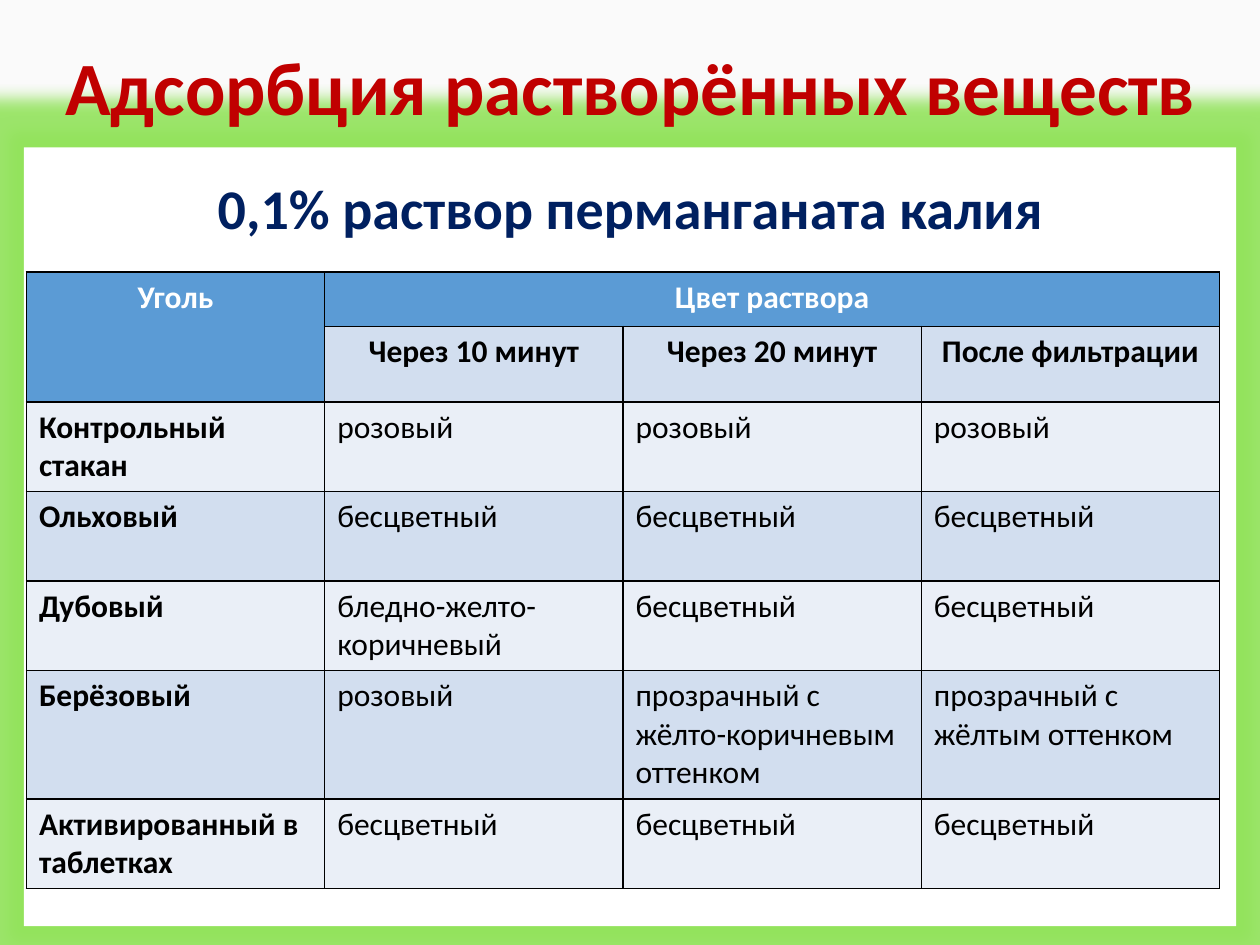
from lxml import etree
from pptx import Presentation
from pptx.dml.color import RGBColor
from pptx.enum import shapes, text
from pptx.oxml import parse_xml
from pptx.oxml.ns import nsdecls
from pptx.util import Inches, Pt

FONT = "Calibri"
BACKGROUND = RGBColor(0xFA, 0xFA, 0xFA)
WHITE = RGBColor(0xFF, 0xFF, 0xFF)
BLACK = RGBColor(0x00, 0x00, 0x00)
RED = RGBColor(0xC0, 0x00, 0x00)
NAVY = RGBColor(0x00, 0x20, 0x60)
HEADER_BLUE = RGBColor(0x5B, 0x9B, 0xD5)
DARK_BAND = RGBColor(0xD2, 0xDE, 0xEF)
LIGHT_BAND = RGBColor(0xEA, 0xEF, 0xF7)
GLOW_GREEN = RGBColor(0x92, 0xE3, 0x5B)

HEADINGS = [
    ["Уголь", "Цвет раствора", "", ""],
    ["", "Через 10 минут", "Через 20 минут", "После фильтрации"],
]
RESULTS = [
    ["Контрольный стакан", "розовый", "розовый", "розовый"],
    ["Ольховый", "бесцветный", "бесцветный", "бесцветный"],
    ["Дубовый", "бледно-желто-коричневый", "бесцветный", "бесцветный"],
    ["Берёзовый", "розовый", "прозрачный с жёлто-коричневым оттенком",
     "прозрачный с жёлтым оттенком"],
    ["Активированный в таблетках", "бесцветный", "бесцветный", "бесцветный"],
]
ROW_HEIGHTS = [0.43, 0.6, 0.71, 0.71, 0.71, 1.02, 0.71]


def line_xml(tag, color, width):
    return parse_xml(
        f'<a:{tag} {nsdecls("a")} w="{Pt(width)}"><a:solidFill>'
        f'<a:srgbClr val="{color}"/></a:solidFill></a:{tag}>')


def write(frame, words, size, color, bold=True, align=None):
    frame.text = words
    paragraph = frame.paragraphs[0]
    paragraph.alignment = align
    for run in paragraph.runs:
        run.font.name = FONT
        run.font.size = Pt(size)
        run.font.bold = bold
        run.font.color.rgb = color
    return paragraph


def add_glowing_panel(slide, left, top, width, height):
    """Place the white panel behind the title."""
    panel = slide.shapes.add_shape(
        shapes.MSO_SHAPE.RECTANGLE, left, top, width, height)
    panel.fill.solid()
    panel.fill.fore_color.rgb = WHITE
    panel.line.fill.background()
    panel.shadow.inherit = False
    effects = panel.element.spPr.find("{*}effectLst")
    effects.append(parse_xml(
        f'<a:glow {nsdecls("a")} rad="{Inches(0.25)}">'
        f'<a:srgbClr val="{GLOW_GREEN}"><a:alpha val="90000"/></a:srgbClr></a:glow>'))
    slide.shapes.title.element.addprevious(panel.element)


def place_title(slide, left, top, width, height):
    title = slide.shapes.title
    title.left, title.top, title.width, title.height = left, top, width, height
    frame = title.text_frame
    frame.vertical_anchor = text.MSO_ANCHOR.MIDDLE
    frame.auto_size = text.MSO_AUTO_SIZE.NONE
    heading = write(frame, "Адсорбция растворённых веществ", 43, RED,
                    align=text.PP_ALIGN.CENTER)
    heading.line_spacing = 0.9
    heading.runs[0].font.element.insert(0, line_xml("ln", WHITE, 0.75)) \
        if hasattr(heading.runs[0].font, "element") else \
        heading.runs[0]._r.get_or_add_rPr().insert(0, line_xml("ln", WHITE, 0.75))


def add_solution_name(slide, left, top, width, height):
    frame = slide.shapes.add_textbox(left, top, width, height).text_frame
    frame.word_wrap = True
    frame.auto_size = text.MSO_AUTO_SIZE.SHAPE_TO_FIT_TEXT
    write(frame, "0,1% раствор перманганата калия", 32, NAVY)


def cell_colors(row, column):
    """Return the fill and the font colour of a cell."""
    if row == 0 or (row == 1 and column == 0):
        return HEADER_BLUE, WHITE
    return (DARK_BAND if row % 2 else LIGHT_BAND), BLACK


def add_results_table(slide, left, top, width):
    rows = HEADINGS + RESULTS
    columns = len(rows[0])
    table = slide.shapes.add_table(
        len(rows), columns, left, top, width, Inches(sum(ROW_HEIGHTS))).table
    for column in table.columns:
        column.width = width // columns
    for row, height in zip(table.rows, ROW_HEIGHTS):
        row.height = Inches(height)
    for r, words in enumerate(rows):
        for c, word in enumerate(words):
            cell = table.cell(r, c)
            fill, color = cell_colors(r, c)
            is_heading = r < len(HEADINGS)
            write(cell.text_frame, word, 18, color, bold=is_heading or c == 0,
                  align=text.PP_ALIGN.CENTER if is_heading else None)
            borders = cell._tc.get_or_add_tcPr()
            for side in ("lnL", "lnR", "lnT", "lnB"):
                borders.append(line_xml(side, BLACK, 1))
            cell.fill.solid()
            cell.fill.fore_color.rgb = fill
    table.cell(0, 0).merge(table.cell(1, 0))
    table.cell(0, 1).merge(table.cell(0, columns - 1))


def main():
    deck = Presentation()
    deck.slide_width, deck.slide_height = Inches(10), Inches(7.5)
    slide = deck.slides.add_slide(deck.slide_layouts[5])
    slide.background.fill.solid()
    slide.background.fill.fore_color.rgb = BACKGROUND
    add_glowing_panel(slide, Inches(0.19), Inches(1.17), Inches(9.62), Inches(6.18))
    place_title(slide, 0, 0, Inches(10), Inches(1.45))
    add_results_table(slide, Inches(0.21), Inches(2.16), Inches(9.47))
    add_solution_name(slide, Inches(1.63), Inches(1.33), Inches(7.73), Inches(0.64))
    deck.save("out.pptx")


if __name__ == "__main__":
    main()
